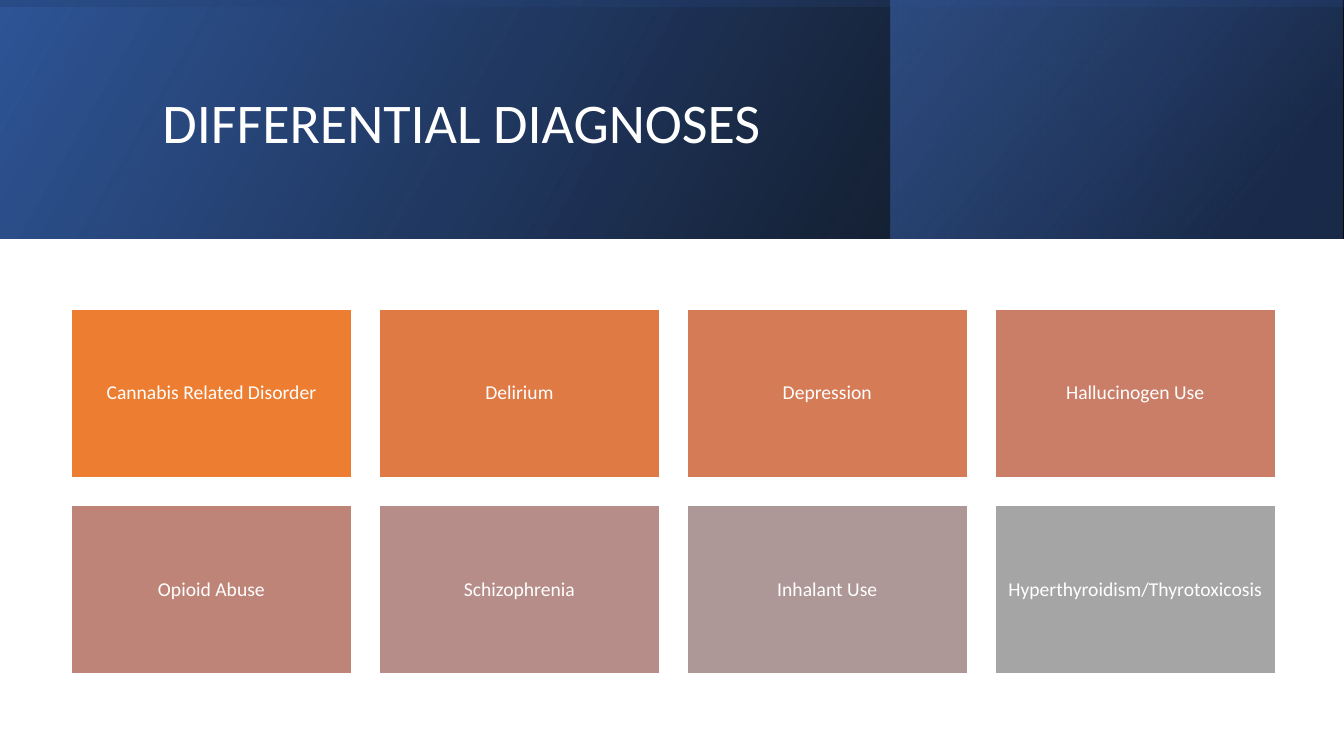
from dataclasses import dataclass

from lxml import etree
from pptx import Presentation
from pptx.dml.color import RGBColor
from pptx.enum import shapes, text
from pptx.oxml import ns
from pptx.util import Cm, Pt

WHITE = RGBColor(0xFF, 0xFF, 0xFF)
BLACK = RGBColor(0x00, 0x00, 0x00)
NAVY = RGBColor(0x20, 0x38, 0x64)
DEEP_BLUE = RGBColor(0x2F, 0x55, 0x97)
BLUE = RGBColor(0x44, 0x72, 0xC4)

FONT = "Calibri"
SLIDE_WIDTH, SLIDE_HEIGHT = 33.87, 19.05
BANNER_HEIGHT = 6.02
COLUMNS = 4
TILE_LEFT, TILE_TOP = 1.8, 7.8
TILE_WIDTH, TILE_HEIGHT = 7.06, 4.24
TILE_GAP = 0.7


@dataclass(frozen=True)
class Stop:
    position: int
    color: RGBColor
    opacity: int


@dataclass(frozen=True)
class Band:
    left: float
    top: float
    width: float
    height: float
    angle: int
    stops: tuple[Stop, ...]
    rotation: int = 0


@dataclass(frozen=True)
class Diagnosis:
    name: str
    color: RGBColor


BANDS = (
    Band(0, 0, SLIDE_WIDTH, BANNER_HEIGHT, 330,
         (Stop(0, BLACK, 96), Stop(100, DEEP_BLUE, 100))),
    Band(22.45, 0, 11.38, BANNER_HEIGHT, 320,
         (Stop(19, NAVY, 68), Stop(100, BLUE, 48))),
    Band((SLIDE_WIDTH - BANNER_HEIGHT) / 2, (BANNER_HEIGHT - SLIDE_WIDTH) / 2,
         BANNER_HEIGHT, SLIDE_WIDTH, 350,
         (Stop(23, DEEP_BLUE, 16), Stop(99, BLACK, 45)), rotation=270),
)

DIAGNOSES = (
    Diagnosis("Cannabis Related Disorder", RGBColor(0xED, 0x7D, 0x31)),
    Diagnosis("Delirium", RGBColor(0xE0, 0x7A, 0x44)),
    Diagnosis("Depression", RGBColor(0xD5, 0x7B, 0x56)),
    Diagnosis("Hallucinogen Use", RGBColor(0xCA, 0x7E, 0x67)),
    Diagnosis("Opioid Abuse", RGBColor(0xBF, 0x84, 0x78)),
    Diagnosis("Schizophrenia", RGBColor(0xB6, 0x8D, 0x88)),
    Diagnosis("Inhalant Use", RGBColor(0xAD, 0x98, 0x97)),
    Diagnosis("Hyperthyroidism/Thyrotoxicosis", RGBColor(0xA5, 0xA5, 0xA5)),
)


def add_rectangle(slide, left: float, top: float, width: float, height: float):
    rectangle = slide.shapes.add_shape(
        shapes.MSO_SHAPE.RECTANGLE, Cm(left), Cm(top), Cm(width), Cm(height))
    rectangle.shadow.inherit = False
    return rectangle


def gradient_fill(band: Band) -> etree._Element:
    gradient = etree.Element(ns.qn("a:gradFill"), rotWithShape="1")
    stop_list = etree.SubElement(gradient, ns.qn("a:gsLst"))
    for stop in band.stops:
        mark = etree.SubElement(stop_list, ns.qn("a:gs"), pos=str(stop.position * 1000))
        color = etree.SubElement(mark, ns.qn("a:srgbClr"), val=str(stop.color))
        etree.SubElement(color, ns.qn("a:alpha"), val=str(stop.opacity * 1000))
    etree.SubElement(gradient, ns.qn("a:lin"), ang=str(band.angle * 60000), scaled="0")
    return gradient


def add_band(slide, band: Band) -> None:
    panel = add_rectangle(slide, band.left, band.top, band.width, band.height)
    panel.rotation = band.rotation
    panel.line.fill.background()
    properties = panel._element.spPr
    properties.find(ns.qn("a:xfrm")).set("flipH", "1")
    properties.find(ns.qn("a:prstGeom")).addnext(gradient_fill(band))


def format_paragraph(paragraph, size: int, alignment: text.PP_ALIGN) -> None:
    paragraph.alignment = alignment
    paragraph.line_spacing = 0.9
    paragraph.font.name = FONT
    paragraph.font.size = Pt(size)
    paragraph.font.color.rgb = WHITE


def place_title(slide) -> None:
    title = slide.shapes.title
    title.left, title.top = Cm(3.84), Cm(0.97)
    title.width, title.height = Cm(27), Cm(4.37)
    title.text_frame.text = "DIFFERENTIAL DIAGNOSES"
    title.text_frame.vertical_anchor = text.MSO_ANCHOR.MIDDLE
    format_paragraph(title.text_frame.paragraphs[0], 40, text.PP_ALIGN.LEFT)
    slide.shapes._spTree.append(title._element)


def add_tile(slide, index: int, diagnosis: Diagnosis) -> None:
    row, column = divmod(index, COLUMNS)
    tile = add_rectangle(
        slide,
        TILE_LEFT + column * (TILE_WIDTH + TILE_GAP),
        TILE_TOP + row * (TILE_HEIGHT + TILE_GAP),
        TILE_WIDTH, TILE_HEIGHT)
    tile.fill.solid()
    tile.fill.fore_color.rgb = diagnosis.color
    tile.line.color.rgb = WHITE
    tile.line.width = Pt(1)
    frame = tile.text_frame
    frame.word_wrap = True
    frame.vertical_anchor = text.MSO_ANCHOR.MIDDLE
    frame.margin_left = frame.margin_right = Cm(0.15)
    frame.margin_top = frame.margin_bottom = Cm(0.15)
    frame.text = diagnosis.name
    format_paragraph(frame.paragraphs[0], 14, text.PP_ALIGN.CENTER)


def main() -> None:
    presentation = Presentation()
    presentation.slide_width = Cm(SLIDE_WIDTH)
    presentation.slide_height = Cm(SLIDE_HEIGHT)
    slide = presentation.slides.add_slide(presentation.slide_layouts[5])
    for band in BANDS:
        add_band(slide, band)
    place_title(slide)
    for index, diagnosis in enumerate(DIAGNOSES):
        add_tile(slide, index, diagnosis)
    presentation.save("out.pptx")


if __name__ == "__main__":
    main()
